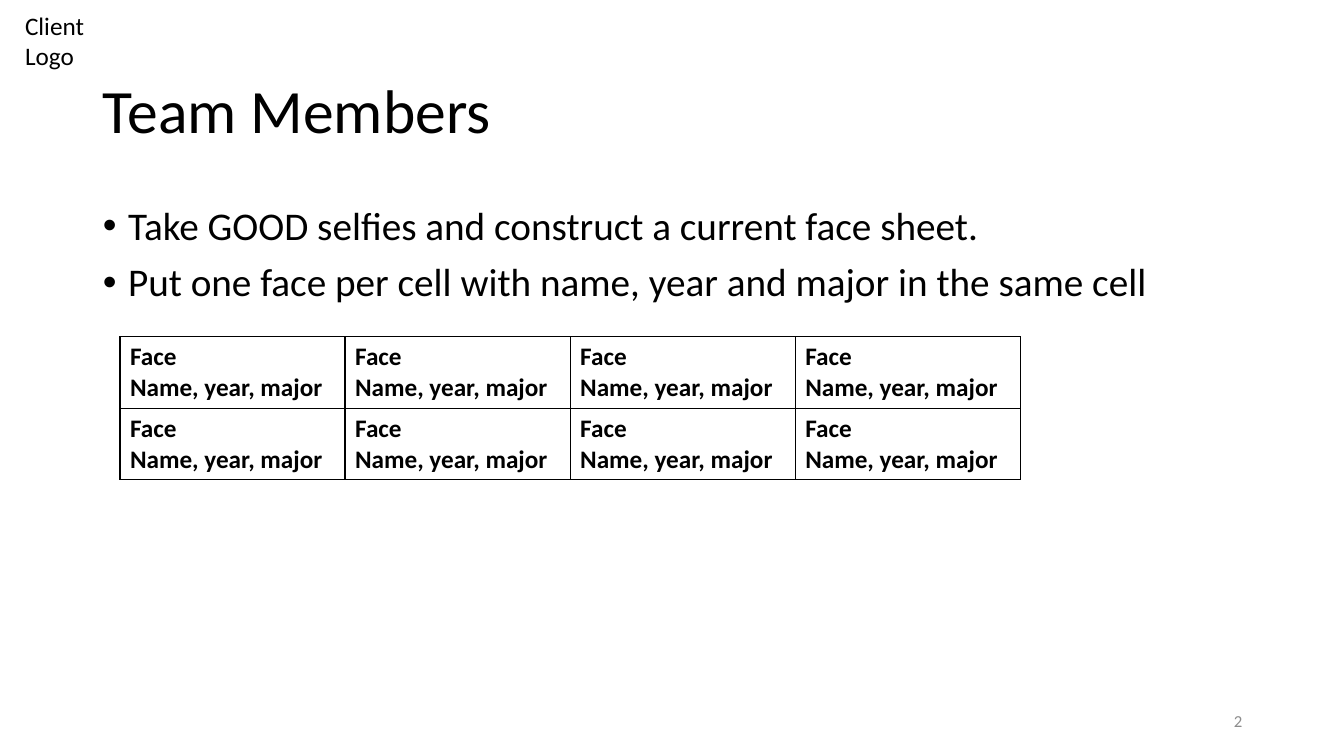
from lxml.etree import SubElement
from pptx import Presentation
from pptx.dml.color import RGBColor
from pptx.enum.text import MSO_ANCHOR, MSO_AUTO_SIZE, PP_ALIGN
from pptx.oxml.ns import qn
from pptx.util import Inches, Pt

BLACK = RGBColor(0x00, 0x00, 0x00)
GRAY = RGBColor(0x8C, 0x8C, 0x8C)
FONT = "Calibri"
BULLETS = [
    "Take GOOD selfies and construct a current face sheet.",
    "Put one face per cell with name, year and major in the same cell",
]
MEMBER_LINES = ["Face", "Name, year, major"]
MEMBER_ROWS, MEMBER_COLUMNS = 2, 4


def style(para, size, color=BLACK, bold=False):
    para.font.name = FONT
    para.font.size = Pt(size)
    para.font.bold = bold
    para.font.color.rgb = color


def place(shape, left, top, width, height):
    shape.left, shape.top = Inches(left), Inches(top)
    shape.width, shape.height = Inches(width), Inches(height)


def add_label(page, text, size, color, align, anchor, left, top, width, height):
    box = page.shapes.add_textbox(
        Inches(left), Inches(top), Inches(width), Inches(height))
    frame = box.text_frame
    frame.word_wrap = True
    frame.vertical_anchor = anchor
    para = frame.paragraphs[0]
    para.text = text
    para.alignment = align
    style(para, size, color)


def fill_title(title, text, left, top, width, height):
    place(title, left, top, width, height)
    frame = title.text_frame
    frame.auto_size = MSO_AUTO_SIZE.NONE
    frame.vertical_anchor = MSO_ANCHOR.MIDDLE
    para = frame.paragraphs[0]
    para.text = text
    para.alignment = PP_ALIGN.LEFT
    para.line_spacing = 0.9
    style(para, 44)


def fill_bullets(body, items, left, top, width, height):
    place(body, left, top, width, height)
    frame = body.text_frame
    frame.auto_size = MSO_AUTO_SIZE.NONE
    for index, item in enumerate(items):
        para = frame.add_paragraph() if index else frame.paragraphs[0]
        para.text = item
        para.line_spacing = 0.9
        para.space_before = Pt(10 if index else 0)
        properties = para._p.get_or_add_pPr()
        properties.set("marL", str(Inches(0.25)))
        properties.set("indent", str(Inches(-0.25)))
        SubElement(properties, qn("a:buFont"), typeface="Arial")
        SubElement(properties, qn("a:buChar"), char="•")
        style(para, 28)


def add_borders(cell):
    properties = cell._tc.get_or_add_tcPr()
    for index, side in enumerate(("lnL", "lnR", "lnT", "lnB")):
        line = properties.makeelement(qn(f"a:{side}"), {"w": str(Pt(1))})
        fill = SubElement(line, qn("a:solidFill"))
        SubElement(fill, qn("a:srgbClr"), val=str(BLACK))
        properties.insert(index, line)


def add_face_sheet(page, left, top, width, height):
    table = page.shapes.add_table(
        MEMBER_ROWS, MEMBER_COLUMNS,
        Inches(left), Inches(top), Inches(width), Inches(height)).table
    table.first_row = False
    table.horz_banding = False
    for cell in table.iter_cells():
        cell.fill.background()
        add_borders(cell)
        cell.text = "\n".join(MEMBER_LINES)
        for para in cell.text_frame.paragraphs:
            style(para, 18, bold=True)


def build_team_slide(deck):
    page = deck.slides.add_slide(deck.slide_layouts[1])
    title, body = page.placeholders
    add_label(page, "Client\vLogo", 18, BLACK, PP_ALIGN.LEFT,
              MSO_ANCHOR.TOP, 0.15, 0.05, 1.11, 0.71)
    fill_title(title, "Team Members", 0.92, 0.4, 11.5, 1.45)
    fill_bullets(body, BULLETS, 0.92, 2, 11.5, 4.76)
    add_face_sheet(page, 1.19, 3.34, 8.93, 1.42)
    add_label(page, "2", 12, GRAY, PP_ALIGN.RIGHT,
              MSO_ANCHOR.MIDDLE, 9.42, 6.95, 3, 0.4)


def main():
    deck = Presentation()
    deck.slide_width, deck.slide_height = Inches(13.33), Inches(7.5)
    build_team_slide(deck)
    deck.save("out.pptx")


if __name__ == "__main__":
    main()
